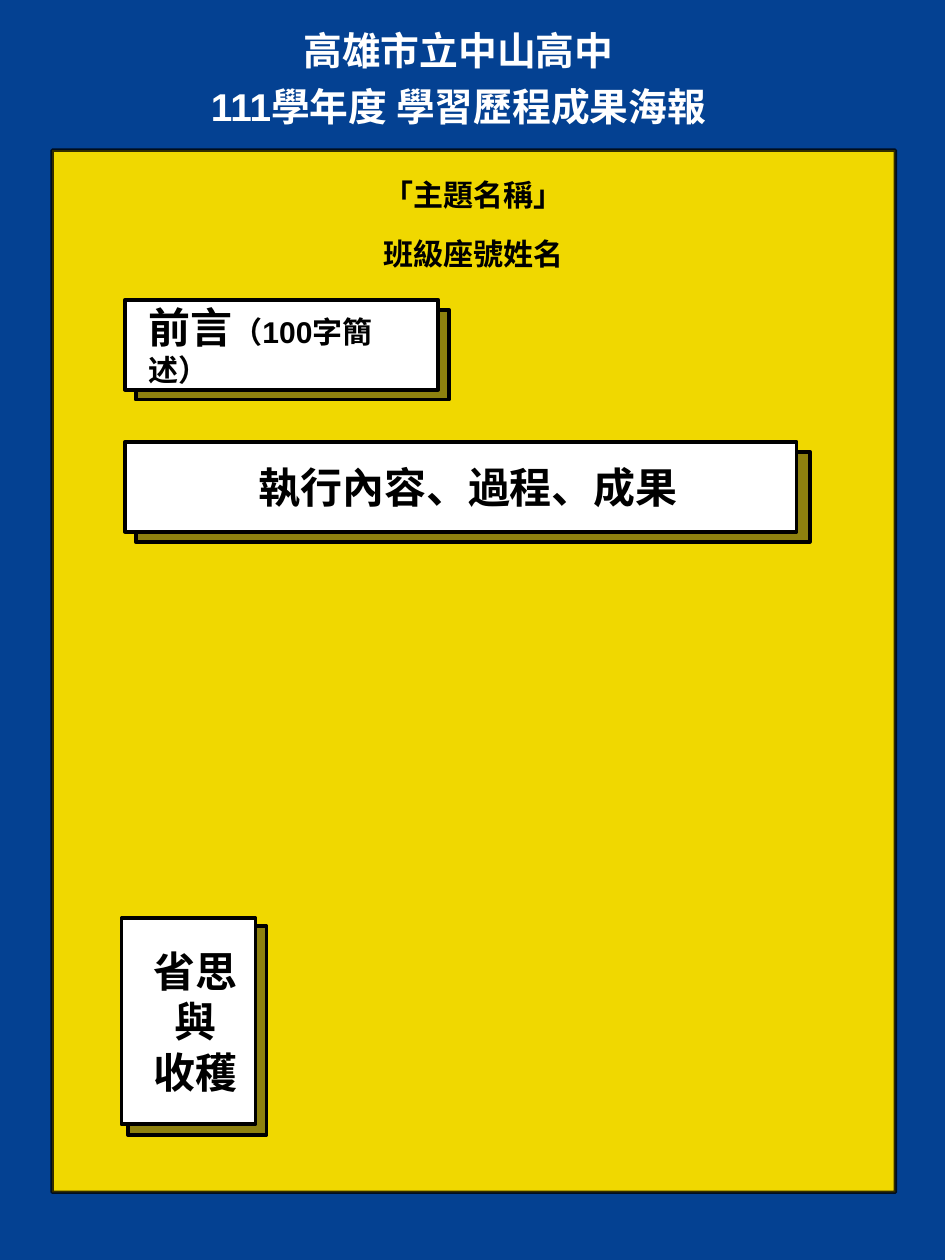
from lxml.etree import SubElement
from pptx import Presentation
from pptx.dml.color import RGBColor
from pptx.enum.shapes import MSO_SHAPE
from pptx.enum.text import MSO_ANCHOR, PP_ALIGN
from pptx.oxml.ns import qn
from pptx.util import Cm, Pt

COLORS = {"blue": "044192", "yellow": "F0D800", "olive": "8E810F",
          "white": "FFFFFF", "black": "000000"}
CJK_FONT = "Noto Sans CJK TC"
HEADING = 33.6


def color(name):
    return RGBColor.from_string(COLORS[name])


def add_panel(shapes, box, fill, width):
    """Outlined rectangle; box is left, top, width, height in cm."""
    panel = shapes.add_shape(MSO_SHAPE.RECTANGLE, *map(Cm, box))
    panel.shadow.inherit = False
    panel.fill.solid()
    panel.fill.fore_color.rgb = color(fill)
    panel.line.color.rgb = color("black")
    panel.line.width = Pt(width)
    return panel


def write(frame, paragraphs, ink="black", align=PP_ALIGN.CENTER, spacing=None, indent=0):
    """Each paragraph is a list of (text, size, font); \\n breaks a line."""
    frame.word_wrap = True
    for number, spans in enumerate(paragraphs):
        para = frame.paragraphs[0] if number == 0 else frame.add_paragraph()
        for name, value in {"alignment": align, "line_spacing": spacing}.items():
            setattr(para, name, value)
        if indent:
            properties = para._p.get_or_add_pPr()
            properties.set("marL", str(Cm(indent)))
            properties.set("indent", "0")
        for text, size, font in spans:
            for row, line in enumerate(text.split("\n")):
                if row:
                    para.add_line_break()
                span = para.add_run()
                span.text = line
                for name, value in {"size": Pt(size), "name": font, "bold": True}.items():
                    setattr(span.font, name, value)
                span.font.color.rgb = color(ink)
                SubElement(span.font._element, qn("a:ea"), typeface=CJK_FONT)


def add_text(page, box, paragraphs, **style):
    label = page.shapes.add_textbox(*map(Cm, box))
    write(label.text_frame, paragraphs, **style)


def add_header(page, box):
    add_text(page, box, [[("高雄市立中山高中\n111學年度 學習歷程成果海報", 31, "Arial")]],
             ink="white", spacing=1.2)


def add_board(page, box):
    board = add_panel(page.shapes, box, "yellow", 2.75)
    line_color = board.line._ln.find(".//" + qn("a:srgbClr"))
    SubElement(line_color, qn("a:alpha"), val="79000")
    # Topic and author, centred at the top of the board
    left, top, width, _ = box
    label_width = 12.32
    add_text(page, (left + (width - label_width) / 2, top, label_width, 3.58),
             [[("「", 24, "Lato"), ("主題名稱", 24, "Arial"), ("」", 24, CJK_FONT)],
              [("班級座號姓名", 24, "Arial")]], spacing=1.62)


def add_card(shapes, box, shade, paragraphs, align=PP_ALIGN.CENTER):
    """White card over an olive one; shade is its offset and extra size."""
    left, top, width, height = box
    right, down, wider, taller = shade
    add_panel(shapes, (left + right, top + down, width + wider, height + taller), "olive", 3)
    card = add_panel(shapes, box, "white", 3)
    card.text_frame.vertical_anchor = MSO_ANCHOR.MIDDLE
    write(card.text_frame, paragraphs, align=align, indent=0.41)


def main():
    deck = Presentation()
    deck.slide_width, deck.slide_height = Cm(26.67), Cm(35.56)
    page = deck.slides.add_slide(deck.slide_layouts[6])
    page.background.fill.solid()
    page.background.fill.fore_color.rgb = color("blue")

    add_board(page, (1.47, 4.24, 23.8, 29.41))
    add_header(page, (2.29, 0.38, 21.29, 3.43))

    # Section headings
    add_card(page.shapes.add_group_shape().shapes, (3.53, 8.46, 8.84, 2.54),
             (0.3, 0.28, 0, 0),
             [[("前言", HEADING, "Arial"), ("（100字簡述）", 24, "Arial")]], PP_ALIGN.LEFT)
    add_card(page.shapes, (3.53, 12.47, 18.95, 2.54), (0.3, 0.28, 0.08, 0),
             [[("執行內容、過程、成果", HEADING, "Arial")]])
    add_card(page.shapes, (3.43, 25.91, 3.78, 5.82), (0.18, 0.23, 0.13, 0.07),
             [[(text, HEADING, "Arial")] for text in ("省思與", "收穫")])

    deck.save("out.pptx")


if __name__ == "__main__":
    main()
